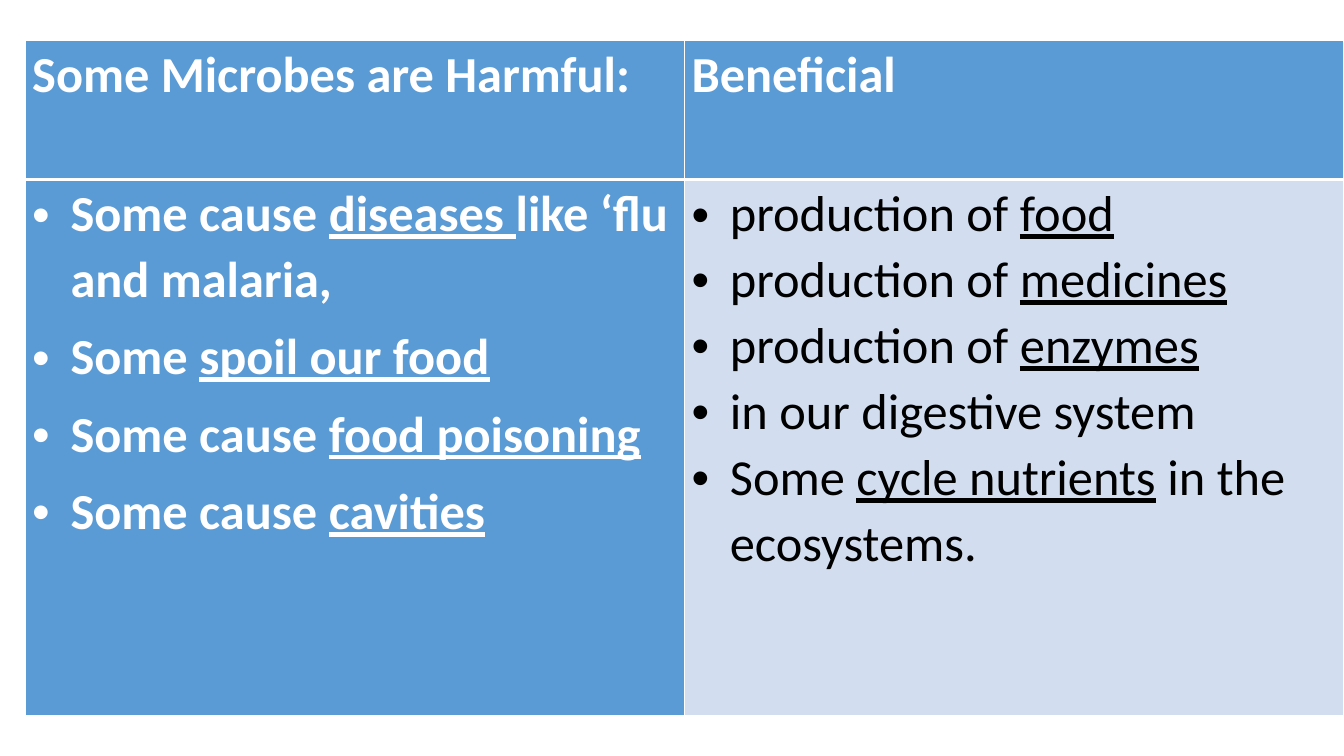
from lxml import etree
from pptx import Presentation
from pptx import util as u
from pptx.dml.color import RGBColor
from pptx.oxml.ns import qn

COLORS = {"blue": "5B9BD5", "pale": "D2DEEF", "white": "FFFFFF", "black": "000000"}
FONT, SIZE = "Calibri", 36
LEFT, TOP = 0.25, 0.4
COL_WIDTH = 6.54
ROW_HEIGHTS = [1.38, 5.32]
INDENT = 0.38

# Each paragraph is a list of (text, underlined) runs.
HEADERS = [
    [[("Some Microbes are Harmful:", False)]],
    [[("Beneficial", False)]],
]
HARMFUL = [
    [("Some cause ", False), ("diseases ", True), ("like ‘flu and malaria,", False)],
    [("Some ", False), ("spoil our food", True)],
    [("Some cause ", False), ("food poisoning", True)],
    [("Some cause ", False), ("cavities", True)],
]
BENEFICIAL = [
    [("production of ", False), ("food", True)],
    [("production of ", False), ("medicines", True)],
    [("production of ", False), ("enzymes", True)],
    [("in our digestive system", False)],
    [("Some ", False), ("cycle nutrients", True), (" in the ecosystems.", False)],
]
# Per cell: paragraphs, fill, text colour, bold, bulleted, space after
ROWS = [
    [(paragraphs, "blue", "white", True, False, 0) for paragraphs in HEADERS],
    [(HARMFUL, "blue", "white", True, True, 8),
     (BENEFICIAL, "pale", "black", False, True, 0)],
]


def rgb(name):
    return RGBColor.from_string(COLORS[name])


def add_borders(cell, widths):
    """Draw white borders; widths maps L, R, T and B to points."""
    tcPr = cell._tc.get_or_add_tcPr()
    for side, width in widths.items():
        ln = etree.SubElement(tcPr, qn(f"a:ln{side}"), w=str(u.Pt(width)))
        fill = etree.SubElement(ln, qn("a:solidFill"))
        etree.SubElement(fill, qn("a:srgbClr"), val=COLORS["white"])


def add_bullet(p):
    pPr = p._p.get_or_add_pPr()
    pPr.set("marL", str(u.Inches(INDENT)))
    pPr.set("indent", str(-u.Inches(INDENT)))
    etree.SubElement(pPr, qn("a:buFont"), typeface="Arial")
    etree.SubElement(pPr, qn("a:buChar"), char="•")


def fill_cell(cell, paragraphs, fill, color, bold, bulleted, space_after):
    cell.margin_left = cell.margin_right = u.Inches(0.07)
    cell.margin_top = cell.margin_bottom = 0
    cell.fill.solid()
    cell.fill.fore_color.rgb = rgb(fill)
    tf = cell.text_frame
    for i, runs in enumerate(paragraphs):
        p = tf.add_paragraph() if i else tf.paragraphs[0]
        p.line_spacing = 1.07
        p.space_after = u.Pt(space_after)
        if bulleted:
            add_bullet(p)
        for words, underlined in runs:
            r = p.add_run()
            r.text = words
            r.font.name, r.font.size = FONT, u.Pt(SIZE)
            r.font.bold, r.font.underline = bold, underlined
            r.font.color.rgb = rgb(color)


def main():
    prs = Presentation()
    prs.slide_width, prs.slide_height = u.Inches(13.33), u.Inches(7.5)
    s = prs.slides.add_slide(prs.slide_layouts[6])
    table = s.shapes.add_table(
        len(ROWS), len(ROWS[0]), u.Inches(LEFT), u.Inches(TOP),
        u.Inches(COL_WIDTH * len(ROWS[0])), u.Inches(sum(ROW_HEIGHTS))).table
    for column in table.columns:
        column.width = u.Inches(COL_WIDTH)
    for i, (row, height) in enumerate(zip(ROWS, ROW_HEIGHTS)):
        table.rows[i].height = u.Inches(height)
        for j, content in enumerate(row):
            cell = table.cell(i, j)
            add_borders(cell, {"L": 1, "R": 1, "T": 3 if i else 1, "B": 1 if i else 3})
            fill_cell(cell, *content)
    prs.save("out.pptx")


if __name__ == "__main__":
    main()
